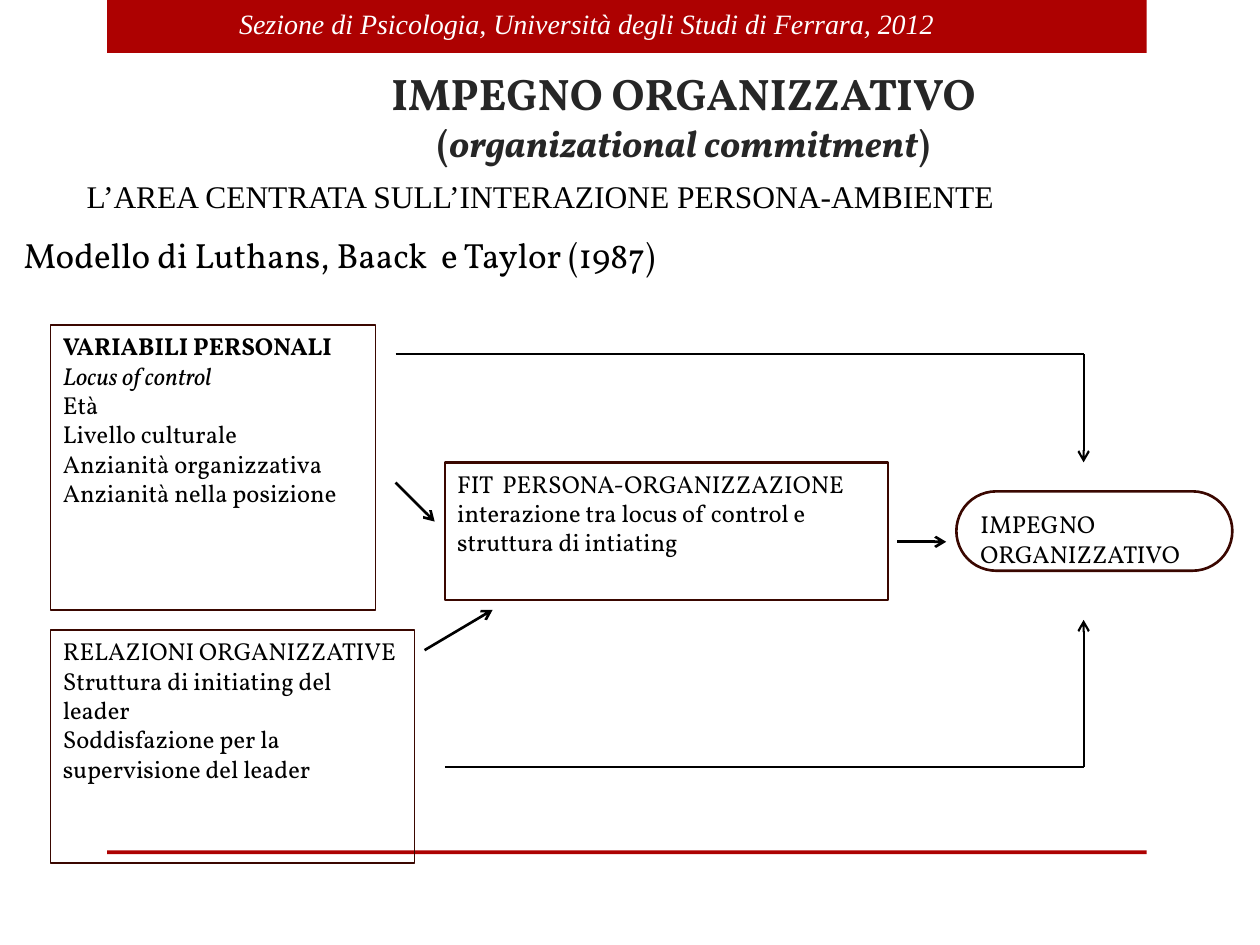
from lxml import etree
from pptx import Presentation
from pptx.dml.color import RGBColor
from pptx.enum.shapes import MSO_CONNECTOR, MSO_SHAPE
from pptx.enum.text import MSO_ANCHOR, MSO_AUTO_SIZE, PP_ALIGN
from pptx.oxml.ns import qn
from pptx.util import Inches, Pt

RECT, PILL = MSO_SHAPE.RECTANGLE, MSO_SHAPE.ROUNDED_RECTANGLE
STRAIGHT = MSO_CONNECTOR.STRAIGHT
TOP, BOTTOM = MSO_ANCHOR.TOP, MSO_ANCHOR.BOTTOM
LEFT, CENTER, JUSTIFY = PP_ALIGN.LEFT, PP_ALIGN.CENTER, PP_ALIGN.JUSTIFY
NO_AUTOFIT = MSO_AUTO_SIZE.NONE
SERIF, VOLLKORN = "Times New Roman", "Vollkorn"
RED, MAROON, BLACK, GREY, WHITE = "AD0101", "3A0700", "000000", "262626", "FFFFFF"


def color(value):
    return RGBColor.from_string(value)


def inches(box):
    return [Inches(value) for value in box]


def add_run(paragraph, text, font=VOLLKORN, size=14, ink=BLACK, bold=False, italic=False):
    run = paragraph.add_run()
    run.text = text
    run.font.name = font
    run.font.size = Pt(size)
    run.font.color.rgb = color(ink)
    run.font.bold = bold
    run.font.italic = italic


def add_text(slide, box, text, align=LEFT, indent=0, **style):
    frame = slide.shapes.add_textbox(*inches(box)).text_frame
    frame.word_wrap = True
    paragraph = frame.paragraphs[0]
    paragraph.alignment = align
    if indent:
        paragraph._p.get_or_add_pPr().set("marL", str(Inches(indent)))
    add_run(paragraph, text, **style)


def add_bar(slide, box):
    bar = slide.shapes.add_shape(RECT, *inches(box))
    bar.shadow.inherit = False
    bar.fill.solid()
    bar.fill.fore_color.rgb = color(RED)
    bar.line.fill.background()


def add_frame(slide):
    add_bar(slide, (0.85, 0, 8.25, 0.42))
    add_bar(slide, (0.85, 6.75, 8.25, 0.03))
    add_text(slide, (1.8, 0, 5.86, 0.37),
             "Sezione di Psicologia, Università degli Studi di Ferrara, 2012",
             font=SERIF, size=16, ink=WHITE, italic=True)


def add_title(slide, box):
    title = slide.shapes.title
    title.left, title.top, title.width, title.height = inches(box)
    frame = title.text_frame
    frame.word_wrap = True
    frame.auto_size = NO_AUTOFIT
    frame.vertical_anchor = BOTTOM
    frame.margin_bottom = 0
    paragraph = frame.paragraphs[0]
    paragraph.alignment = CENTER
    add_run(paragraph, "IMPEGNO ORGANIZZATIVO", size=25.2, ink=GREY, bold=True)
    paragraph.add_line_break()
    for text, italic in (("(", False), ("organizational commitment", True), (")", False)):
        add_run(paragraph, text, size=21.6, ink=GREY, bold=True, italic=italic)


def add_node(slide, box, lines, weight=1, outline=RECT, styles=()):
    node = slide.shapes.add_shape(outline, *inches(box))
    node.shadow.inherit = False
    node.fill.background()
    node.line.color.rgb = color(MAROON)
    node.line.width = Pt(weight)
    if outline == PILL:
        node.adjustments[0] = 0.5
    frame = node.text_frame
    frame.word_wrap = True
    frame.vertical_anchor = TOP
    for index, line in enumerate(lines):
        paragraph = frame.add_paragraph() if index else frame.paragraphs[0]
        paragraph.alignment = LEFT
        add_run(paragraph, line, **(styles[index] if index < len(styles) else {}))


def add_link(slide, start, end, weight=1.25, arrow=True):
    link = slide.shapes.add_connector(STRAIGHT, *inches(start + end))
    link.line.color.rgb = color(BLACK)
    link.line.width = Pt(weight)
    if arrow:
        etree.SubElement(link.line._get_or_add_ln(), qn("a:tailEnd"), type="arrow")
    etree.SubElement(link._element.spPr, qn("a:effectLst"))


def add_model(slide):
    add_node(slide, (0.4, 2.58, 2.58, 2.26),
             ["VARIABILI PERSONALI", "Locus of control", "Età", "Livello culturale",
              "Anzianità organizzativa", "Anzianità nella posizione"],
             styles=({"bold": True}, {"italic": True}))
    add_node(slide, (0.4, 5, 2.89, 1.85),
             ["RELAZIONI ORGANIZZATIVE", "Struttura di initiating del leader",
              "Soddisfazione per la supervisione del leader"])
    add_node(slide, (3.53, 3.67, 3.52, 1.09),
             ["FIT  PERSONA-ORGANIZZAZIONE",
              "interazione tra locus of control e struttura di intiating"], weight=1.25)
    add_node(slide, (7.59, 3.9, 2.19, 0.63), ["IMPEGNO ORGANIZZATIVO"],
             weight=1.5, outline=PILL)

    outcome_x = 8.6
    for start_x, y, tip_y in ((3.14, 2.81, 3.67), (3.53, 6.09, 4.92)):
        add_link(slide, (start_x, y), (outcome_x, y), arrow=False)
        add_link(slide, (outcome_x, y), (outcome_x, tip_y))
    for start, end in (((3.14, 3.83), (3.45, 4.14)),
                       ((3.37, 5.16), (3.91, 4.84)),
                       ((7.12, 4.3), (7.51, 4.3))):
        add_link(slide, start, end, weight=1.5)


def main():
    deck = Presentation()
    deck.slide_width, deck.slide_height = Inches(10), Inches(7.5)
    slide = deck.slides.add_slide(deck.slide_layouts[5])
    add_frame(slide)
    add_title(slide, (0.92, 0.61, 9.01, 0.7))
    add_text(slide, (0.09, 1.36, 10, 0.56),
             "L’AREA CENTRATA SULL’INTERAZIONE PERSONA-AMBIENTE",
             indent=0.5, font=SERIF, size=18)
    add_text(slide, (0.09, 1.8, 10, 0.61), "Modello di Luthans, Baack  e Taylor (1987)",
             align=JUSTIFY, size=20)
    add_model(slide)
    deck.save("out.pptx")


if __name__ == "__main__":
    main()
